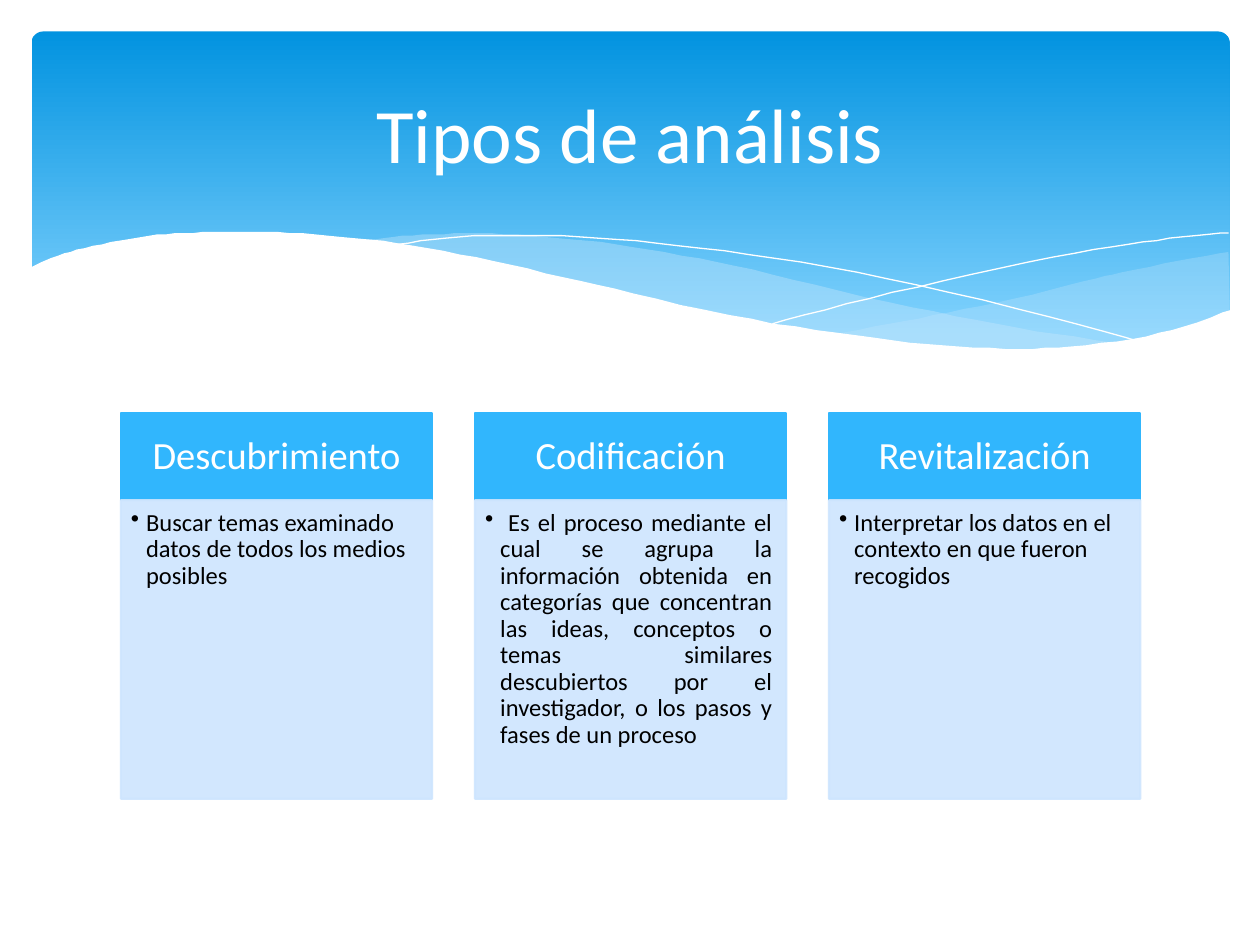
import dataclasses
import pptx
import pptx.dml.color
import pptx.enum.shapes
import pptx.enum.text
import pptx.oxml
import pptx.oxml.ns
import pptx.util

ALIGN = pptx.enum.text.PP_ALIGN
ANCHOR = pptx.enum.text.MSO_ANCHOR
SHAPES = pptx.enum.shapes.MSO_SHAPE


@dataclasses.dataclass(frozen=True)
class Theme:
    font: str = "Calibri"
    title_size: int = 44
    heading_size: int = 22
    body_size: int = 14
    white: str = "FFFFFF"
    black: str = "000000"
    sky_top: str = "0293E0"
    sky_bottom: str = "83D3FE"
    wave: str = "C6E7FC"
    heading_fill: str = "31B6FD"
    body_fill: str = "CEE5FE"


THEME = Theme()

# The page is a grid of 1000 columns by 750 rows; boxes are left, top, width, height
COLUMNS, ROWS = 1000, 750
CELL = pptx.util.Inches(10) // COLUMNS

BANNER_BOX = (25, 25, 951, 270)
TITLE_BOX = (50, 37, 900, 137)
CARDS_BOX = (96, 328, 809, 306)
CARD_GAP = 34
HEADING_ROWS = 69

# Wave outlines: grid offsets from the banner's top left corner
RIGHT_WAVE = [
    [(950, 175), (910, 182), (866, 191), (836, 198), (780, 212), (728, 223),
     (681, 232), (636, 240)],
    [(636, 240), (680, 246), (732, 250), (778, 253), (829, 251), (872, 245),
     (910, 237), (938, 227), (951, 222)],
]
LEFT_WAVE = [
    [(868, 248), (812, 240), (750, 229), (681, 215), (604, 197), (544, 183),
     (489, 173), (440, 166), (395, 162), (355, 160), (319, 161), (288, 163),
     (261, 166)],
    [(261, 166), (317, 174), (379, 186), (424, 197), (505, 215), (576, 230),
     (640, 241), (697, 249), (748, 252), (793, 253), (832, 252), (868, 248)],
]
FALLING_LINE = [(284, 170), (319, 165), (362, 162), (408, 162), (464, 165),
                (531, 172), (611, 183), (702, 201), (806, 226), (882, 247)]
RISING_LINE = [(588, 232), (647, 216), (723, 198), (811, 179), (870, 169),
               (913, 163), (950, 160)]
WHITE_WAVE = [
    [(952, 221), (915, 234), (874, 244), (825, 250), (784, 252), (736, 250),
     (683, 245), (623, 237), (554, 225), (478, 208), (422, 195), (366, 182),
     (315, 172), (267, 165), (225, 161), (186, 159), (152, 159), (121, 160),
     (94, 162), (70, 166), (42, 172), (21, 178), (-2, 188)],
    [(-2, 304), (952, 304)],
]

CARDS = [
    ("Descubrimiento", ALIGN.LEFT,
     "Buscar temas examinado datos de todos los medios posibles"),
    ("Codificación", ALIGN.JUSTIFY,
     " Es el proceso mediante el cual se agrupa la información obtenida en "
     "categorías que concentran las ideas, conceptos o temas similares "
     "descubiertos por el investigador, o los pasos y fases de un proceso"),
    ("Revitalización", ALIGN.LEFT,
     "Interpretar los datos en el contexto en que fueron recogidos"),
]


def rgb(color):
    return pptx.dml.color.RGBColor.from_string(color)


def grid(box):
    return [round(length * CELL) for length in box]


def set_alpha(fill_parent, percent):
    color = fill_parent.find(pptx.oxml.ns.qn("a:solidFill"))[0]
    alpha = pptx.oxml.parse_xml(
        f'<a:alpha {pptx.oxml.ns.nsdecls("a")} val="{percent * 1000}"/>')
    color.append(alpha)


def paint(shape, color, alpha=100):
    shape.shadow.inherit = False
    shape.fill.solid()
    shape.fill.fore_color.rgb = rgb(color)
    shape.line.fill.background()
    if alpha < 100:
        set_alpha(shape.element.spPr, alpha)


def write(shape, text, size, color, align, anchor, insets):
    frame = shape.text_frame
    frame.text = text
    frame.word_wrap = True
    frame.vertical_anchor = anchor
    (frame.margin_left, frame.margin_top, frame.margin_right,
     frame.margin_bottom) = [pptx.util.Inches(inset) for inset in insets]
    para = frame.paragraphs[0]
    para.alignment = align
    for span in para.runs:
        span.font.name = THEME.font
        span.font.size = pptx.util.Pt(size)
        span.font.color.rgb = rgb(color)
    return para


def add_bullet(para, indent):
    properties = para._p.get_or_add_pPr()
    properties.set("marL", str(indent))
    properties.set("indent", str(-indent))
    properties.append(pptx.oxml.parse_xml(
        f'<a:buChar {pptx.oxml.ns.nsdecls("a")} char="•"/>'))


def smooth(points, steps=4):
    """Catmull-Rom curve through the points."""
    if len(points) < 3:
        return points
    padded = [points[0], *points, points[-1]]
    curve = [points[0]]
    for a, b, c, d in zip(padded, padded[1:], padded[2:], padded[3:]):
        for step in range(1, steps + 1):
            t = step / steps
            curve.append(tuple(
                (2 * q + (r - p) * t + (2 * p - 5 * q + 4 * r - s) * t ** 2
                 + (3 * q - p - 3 * r + s) * t ** 3) / 2
                for p, q, r, s in zip(a, b, c, d)))
    return curve


def add_curve(page, box, edges, closed):
    left, top = box[:2]
    points = [(left + x, top + y) for edge in edges for x, y in smooth(edge)]
    builder = page.shapes.build_freeform(*points[0], scale=CELL)
    builder.add_line_segments(points[1:], close=closed)
    return builder.convert_to_shape()


def add_banner(page, box):
    # Rounded gradient panel
    panel = page.shapes.add_shape(SHAPES.ROUNDED_RECTANGLE, *grid(box))
    panel.adjustments[0] = 0.034
    panel.shadow.inherit = False
    panel.line.fill.background()
    panel.fill.gradient()
    panel.fill.gradient_angle = 270
    stops = [(0, THEME.sky_top), (0.9, THEME.sky_bottom)]
    for stop, (position, color) in zip(panel.fill.gradient_stops, stops):
        stop.position = position
        stop.color.rgb = rgb(color)
    # Translucent waves
    for edges, alpha in [(RIGHT_WAVE, 29), (LEFT_WAVE, 40)]:
        paint(add_curve(page, box, edges, True), THEME.wave, alpha)
    # Hairlines
    for points in (FALLING_LINE, RISING_LINE):
        hairline = add_curve(page, box, [points], False)
        hairline.shadow.inherit = False
        hairline.fill.background()
        hairline.line.color.rgb = rgb(THEME.white)
        hairline.line.width = 0
    # White wave that cuts off the lower edge
    paint(add_curve(page, box, WHITE_WAVE, True), THEME.white)


def add_panel(page, box, color, alpha=100):
    panel = page.shapes.add_shape(SHAPES.RECTANGLE, *grid(box))
    paint(panel, color, alpha)
    panel.line.color.rgb = rgb(color)
    panel.line.width = pptx.util.Pt(1.25)
    if alpha < 100:
        set_alpha(panel.line._ln, alpha)
    return panel


def add_card(page, box, heading, align, body):
    left, top, width, height = box
    # Heading
    panel = add_panel(page, (left, top, width, HEADING_ROWS), THEME.heading_fill)
    para = write(panel, heading, THEME.heading_size, THEME.white, ALIGN.CENTER,
                 ANCHOR.MIDDLE, (0.17, 0.1, 0.17, 0.1))
    para.line_spacing = 0.9
    # Bulleted body
    panel = add_panel(page, (left, top + HEADING_ROWS, width, height - HEADING_ROWS),
                      THEME.body_fill, 90)
    para = write(panel, body, THEME.body_size, THEME.black, align,
                 ANCHOR.TOP, (0.08, 0.08, 0.11, 0.12))
    para.line_spacing = 0.9
    add_bullet(para, pptx.util.Inches(0.12))


def add_cards(page, box):
    left, top, width, height = box
    card_width = (width - CARD_GAP * (len(CARDS) - 1)) / len(CARDS)
    for index, card in enumerate(CARDS):
        card_left = left + index * (card_width + CARD_GAP)
        add_card(page, (card_left, top, card_width, height), *card)


def add_title(page, box):
    title = page.shapes.add_textbox(*grid(box))
    write(title, "Tipos de análisis", THEME.title_size, THEME.white,
          ALIGN.CENTER, ANCHOR.MIDDLE, (0.1, 0.05, 0.1, 0.05))


def main():
    deck = pptx.Presentation()
    deck.slide_width, deck.slide_height = COLUMNS * CELL, ROWS * CELL
    page = deck.slides.add_slide(deck.slide_layouts[6])
    add_banner(page, BANNER_BOX)
    add_cards(page, CARDS_BOX)
    add_title(page, TITLE_BOX)
    deck.save("out.pptx")


if __name__ == "__main__":
    main()
